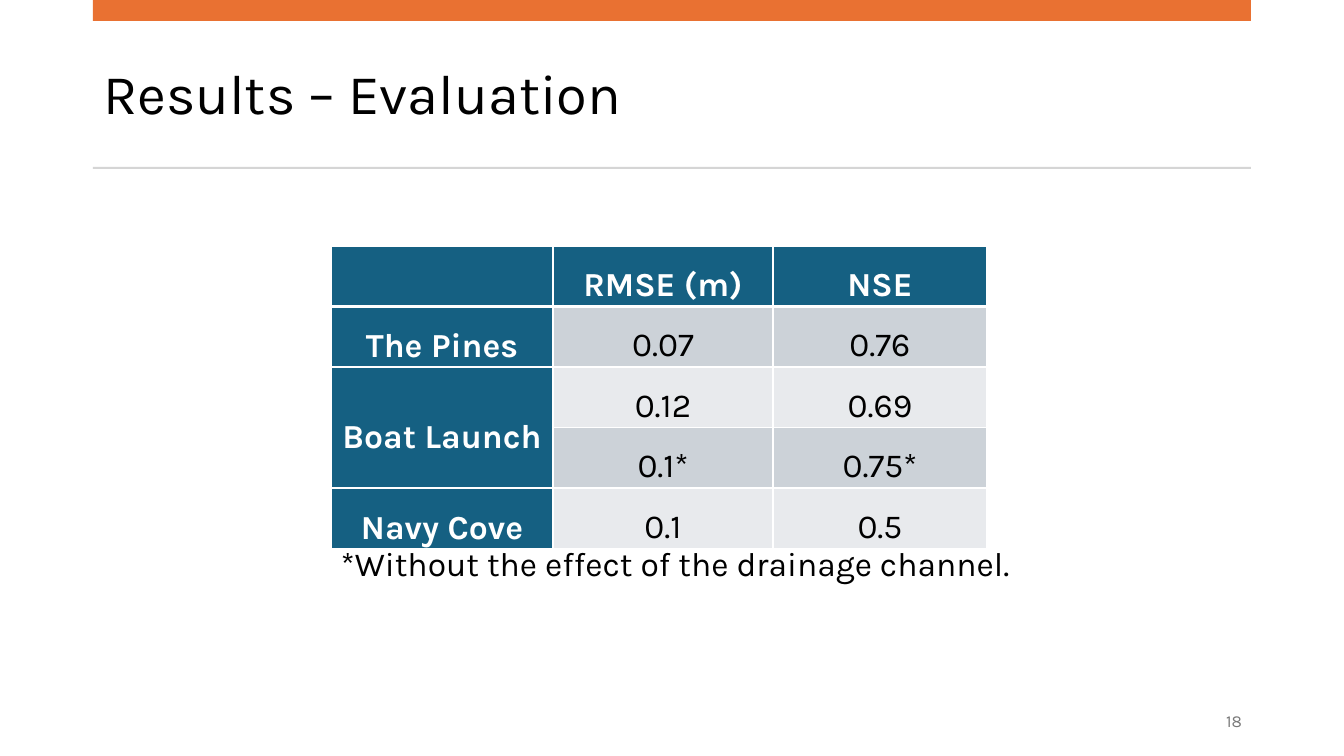
import pptx
import pptx.util
import pptx.dml.color
import pptx.enum.shapes
import pptx.enum.text
import lxml.etree

FONT = "Karla"
BLACK, WHITE, BLUE = "000000", "FFFFFF", "156082"
BANDS = ["CCD2D8", "E8EAED"]

TITLE = ("Results – Evaluation", (93, 37, 1158, 119))
BARS = [
    ("E97132", (93, 0, 1158, 21)),
    ("D5D5D5", (93, 167, 1158, 2)),
]
NOTE = ("*Without the effect of the drainage channel.", (331, 538, 909, 50))
PAGE = ("18", (950, 701, 302, 40))

ROWS = [
    ["", "RMSE (m)", "NSE"],
    ["The Pines", "0.07", "0.76"],
    ["Boat Launch", "0.12", "0.69"],
    ["", "0.1*", "0.75*"],
    ["Navy Cove", "0.1", "0.5"],
]
MERGE = ((2, 0), (3, 0))
LEFT, TOP = 331, 246
COLS = [222, 220, 214]
HIGH = 58

ALIGN = pptx.enum.text.PP_ALIGN
ANCHOR = pptx.enum.text.MSO_ANCHOR
EMU = 12192000 / 1344


def px(n):
    return pptx.util.Emu(round(n * EMU))


def color(code):
    return pptx.dml.color.RGBColor.from_string(code)


def paint(fill, code):
    fill.solid()
    fill.fore_color.rgb = color(code)


def write(frame, text, size, code, align=ALIGN.LEFT, bold=False):
    para = frame.paragraphs[0]
    para.alignment = align
    run = para.add_run()
    run.text = text
    font = run.font
    font.name, font.size, font.bold = FONT, pptx.util.Pt(size), bold
    font.color.rgb = color(code)
    return para


def label(slide, text, box, size, code, align=ALIGN.LEFT, anchor=ANCHOR.TOP):
    frame = slide.shapes.add_textbox(*map(px, box)).text_frame
    frame.word_wrap = True
    frame.vertical_anchor = anchor
    write(frame, text, size, code, align)


def edge(cell, side, width):
    """Draw one white border; call before the cell is filled."""
    ns = "{http://schemas.openxmlformats.org/drawingml/2006/main}"
    props = cell._tc.get_or_add_tcPr()
    line = lxml.etree.SubElement(props, ns + "ln" + side, w=str(pptx.util.Pt(width)))
    fill = lxml.etree.SubElement(line, ns + "solidFill")
    lxml.etree.SubElement(fill, ns + "srgbClr", val=WHITE)


def style(cell, text, row, col):
    head = row == 0 or col == 0
    for side in "LRTB":
        thick = (row == 0 and side == "B") or (row == 1 and side == "T")
        edge(cell, side, 3 if thick else 1)
    paint(cell.fill, BLUE if head else BANDS[(row - 1) % 2])
    cell.margin_left = cell.margin_right = px(7)
    cell.margin_top = cell.margin_bottom = 0
    cell.vertical_anchor = ANCHOR.MIDDLE if col == 0 else ANCHOR.TOP
    if text:
        para = write(cell.text_frame, text, 24, WHITE if head else BLACK,
                     ALIGN.CENTER, head)
        para.line_spacing = 1.5
        para.space_after = pptx.util.Pt(6)


def scores(slide):
    box = (LEFT, TOP, sum(COLS), HIGH * len(ROWS))
    table = slide.shapes.add_table(len(ROWS), len(COLS), *map(px, box)).table
    for col, width in zip(table.columns, COLS):
        col.width = px(width)
    for r, row in enumerate(ROWS):
        for c, text in enumerate(row):
            style(table.cell(r, c), text, r, c)
    first, last = MERGE
    table.cell(*first).merge(table.cell(*last))


def main():
    deck = pptx.Presentation()
    deck.slide_width, deck.slide_height = px(1344), px(756)
    slide = deck.slides.add_slide(deck.slide_layouts[5])

    text, box = TITLE
    title = slide.shapes.title
    title.left, title.top, title.width, title.height = map(px, box)
    title.text_frame.vertical_anchor = ANCHOR.MIDDLE
    write(title.text_frame, text, 40, BLACK).line_spacing = 0.9

    for code, box in BARS:
        bar = slide.shapes.add_shape(
            pptx.enum.shapes.MSO_SHAPE.RECTANGLE, *map(px, box))
        bar.shadow.inherit = False
        paint(bar.fill, code)
        bar.line.fill.background()

    label(slide, *PAGE, 12, "797979", ALIGN.RIGHT, ANCHOR.MIDDLE)
    scores(slide)
    label(slide, *NOTE, 24, BLACK)
    deck.save("out.pptx")


if __name__ == "__main__":
    main()
